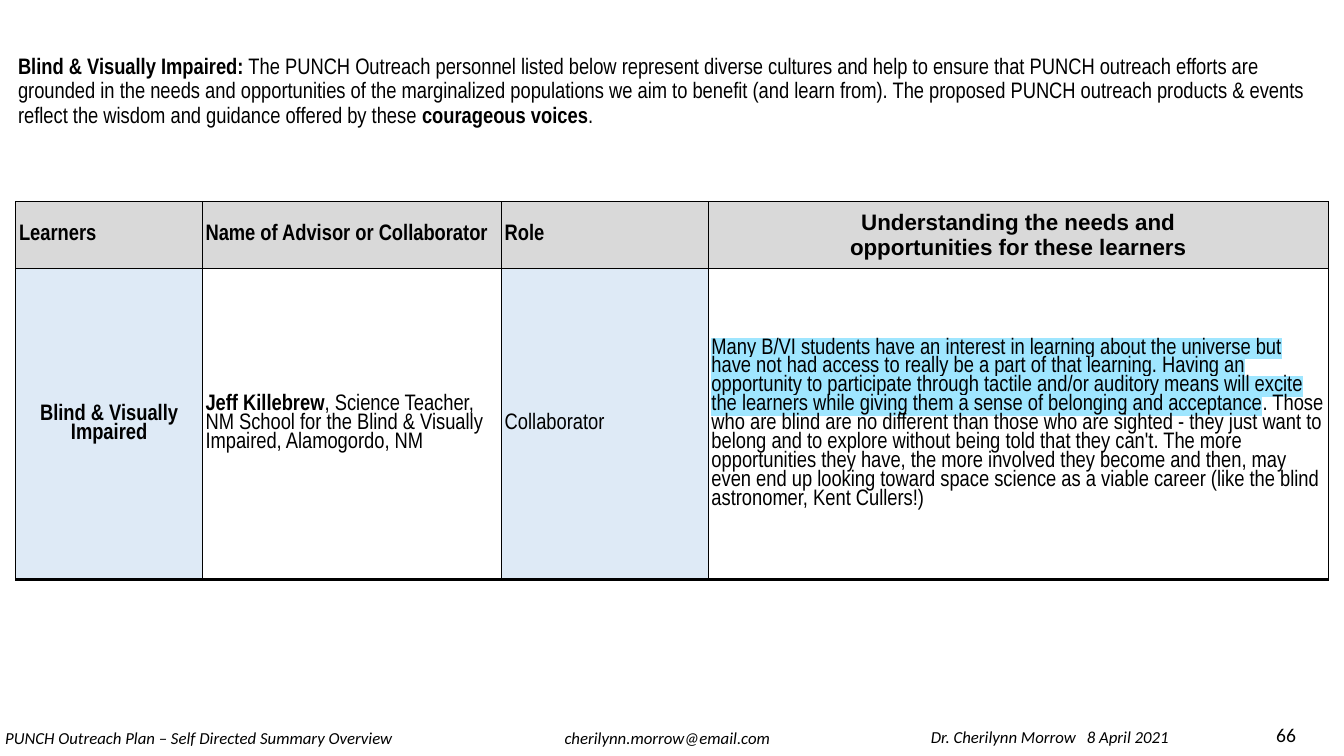
"""Builds the slide on advisors for blind and visually impaired learners."""
from dataclasses import dataclass
from typing import Optional

from lxml import etree
from pptx import Presentation
from pptx.dml import color
from pptx.enum import text
from pptx.oxml import ns
from pptx import util as u

LEFT, CENTER, RIGHT = text.PP_ALIGN.LEFT, text.PP_ALIGN.CENTER, text.PP_ALIGN.RIGHT


@dataclass(frozen=True)
class Theme:
    ink: str = "000000"
    paper: str = "FFFFFF"
    header: str = "D9D9D9"
    tint: str = "DEEAF6"
    marker: str = "9FE6FF"
    narrow: str = "Arial Narrow"
    wide: str = "Arial"
    plain: str = "Calibri"
    body: int = 16
    footer: int = 12
    number: int = 14
    rule: float = 1
    heavy_rule: float = 2.5


THEME = Theme()


@dataclass(frozen=True)
class Span:
    words: str
    bold: bool = False
    marked: bool = False


@dataclass(frozen=True)
class Style:
    font: str = THEME.narrow
    size: int = THEME.body
    align: text.PP_ALIGN = LEFT
    spacing: Optional[float] = 0.9
    italic: bool = False


@dataclass(frozen=True)
class Entry:
    paragraphs: tuple[tuple[Span, ...], ...]
    fill: Optional[str] = None
    style: Style = Style()


@dataclass(frozen=True)
class Footer:
    words: str
    left: float
    top: float
    width: float
    style: Style
    inset: float = 0.13
    left_inset: float = 0.13
    tab: Optional[float] = None
    grows: bool = True


NOTE = Style(THEME.plain, THEME.footer, LEFT, None, True)
CENTERED_NOTE = Style(THEME.plain, THEME.footer, CENTER, None, True)
PAGE_NUMBER = Style(THEME.plain, THEME.number, RIGHT, None)

INTRO = (
    Span("Blind & Visually Impaired:", bold=True),
    Span(" The PUNCH Outreach personnel listed below represent diverse cultures and help to "
         "ensure that PUNCH outreach efforts are grounded in the needs and opportunities of the "
         "marginalized populations we aim to benefit (and learn from). The proposed PUNCH "
         "outreach products & events reflect the wisdom and guidance offered by these "),
    Span("courageous voices", bold=True),
    Span("."),
)

HEADINGS = [Entry(((Span(name, bold=True),),), THEME.header)
            for name in ("Learners", "Name of Advisor or Collaborator", "Role")]
HEADINGS.append(Entry(
    ((Span("Understanding the needs and", bold=True),),
     (Span("opportunities for these learners", bold=True),)),
    THEME.header, Style(font=THEME.wide, align=CENTER, spacing=None)))

ADVISOR = [
    Entry(((Span("Blind & Visually Impaired", bold=True),),), THEME.tint, Style(align=CENTER)),
    Entry(((Span("Jeff Killebrew", bold=True),
            Span(", Science Teacher, NM School for the Blind & Visually Impaired, "
                 "Alamogordo, NM")),)),
    Entry(((Span("Collaborator"),),), THEME.tint),
    Entry(((Span("Many B/VI students have an interest in learning about the universe but have "
                 "not had access to really be a part of that learning. Having an opportunity to "
                 "participate through tactile and/or auditory means will excite the learners "
                 "while giving them a sense of belonging and acceptance", marked=True),
            Span(". Those who are blind are no different than those who are sighted - they just "
                 "want to belong and to explore without being told that they can't. The more "
                 "opportunities they have, the more involved they become and then, may even end "
                 "up looking toward space science as a viable career (like the blind "
                 "astronomer, Kent Cullers!)")),)),
]

COLUMN_WIDTHS = (4.7, 7.54, 5.21, 15.62)
ROW_HEIGHTS = (1.68, 7.85)

FOOTERS = (
    Footer("PUNCH Outreach Plan – Self Directed Summary Overview", 0, 18.21, 10.39, NOTE),
    Footer("Dr. Cherilynn Morrow\t8 April 2021", 22.43, 18.19, 8.05, NOTE,
           left_inset=1.03, tab=3.93),
    Footer("cherilynn.morrow@email.com", 12.4, 18.21, 8.84, CENTERED_NOTE),
    Footer("66", 31.67, 18.08, 1.24, PAGE_NUMBER, 0.13, 0.25, grows=False),
)


def write(frame, paragraphs: tuple[tuple[Span, ...], ...], style: Style,
          tab: Optional[float] = None) -> None:
    """Fill a text frame with styled paragraphs."""
    for index, spans in enumerate(paragraphs):
        para = frame.add_paragraph() if index else frame.paragraphs[0]
        para.alignment = style.align
        para.space_before = u.Pt(0)
        if style.spacing:
            para.line_spacing = style.spacing
        if tab:
            stops = etree.SubElement(para._p.get_or_add_pPr(), ns.qn("a:tabLst"))
            etree.SubElement(stops, ns.qn("a:tab"), pos=str(u.Cm(tab)), algn="l")
        para.font.name = style.font
        para.font.size = u.Pt(style.size)
        para.font.italic = style.italic
        para.font.color.rgb = color.RGBColor.from_string(THEME.ink)
        same_weight = len({span.bold for span in spans}) == 1
        if same_weight:
            para.font.bold = spans[0].bold
        for span in spans:
            run = para.add_run()
            run.text = span.words
            if not same_weight:
                run.font.bold = span.bold
            if span.marked:
                mark = etree.SubElement(run._r.get_or_add_rPr(), ns.qn("a:highlight"))
                etree.SubElement(mark, ns.qn("a:srgbClr"), val=THEME.marker)


def paint(target, fill: Optional[str]) -> None:
    """Give a shape or cell a solid fill, or none."""
    if fill:
        target.fill.solid()
        target.fill.fore_color.rgb = color.RGBColor.from_string(fill)
    else:
        target.fill.background()


def draw_borders(cell, bottom: float) -> None:
    """Outline a table cell, with its own bottom line width."""
    properties = cell._tc.get_or_add_tcPr()
    widths = {"lnL": THEME.rule, "lnR": THEME.rule, "lnT": THEME.rule, "lnB": bottom}
    for index, (side, width) in enumerate(widths.items()):
        line = etree.Element(ns.qn(f"a:{side}"), w=str(u.Pt(width)))
        solid = etree.SubElement(line, ns.qn("a:solidFill"))
        etree.SubElement(solid, ns.qn("a:srgbClr"), val=THEME.ink)
        properties.insert(index, line)


def add_intro(page) -> None:
    """Place the introduction in the title placeholder."""
    title = page.shapes.title
    title.left, title.top, title.width, title.height = map(u.Cm, (0.2, 1.27, 33.07, 2.34))
    paint(title, THEME.paper)
    frame = title.text_frame
    frame.word_wrap = True
    frame.auto_size = text.MSO_AUTO_SIZE.NONE
    frame.vertical_anchor = text.MSO_ANCHOR.TOP
    write(frame, (INTRO,), Style())


def add_advisors(page) -> None:
    """Add the table of advisors."""
    table = page.shapes.add_table(
        len(ROW_HEIGHTS), len(COLUMN_WIDTHS), u.Cm(0.4), u.Cm(5.08),
        u.Cm(sum(COLUMN_WIDTHS)), u.Cm(sum(ROW_HEIGHTS))).table
    table.first_row = table.horz_banding = False
    for column, width in zip(table.columns, COLUMN_WIDTHS):
        column.width = u.Cm(width)
    bottoms = (THEME.rule, THEME.heavy_rule)
    for r, (entries, height, bottom) in enumerate(zip((HEADINGS, ADVISOR), ROW_HEIGHTS, bottoms)):
        table.rows[r].height = u.Cm(height)
        for c, entry in enumerate(entries):
            cell = table.cell(r, c)
            cell.margin_left = cell.margin_right = u.Cm(0.08)
            cell.margin_top = cell.margin_bottom = u.Cm(0.03)
            cell.vertical_anchor = text.MSO_ANCHOR.MIDDLE
            paint(cell, entry.fill)
            draw_borders(cell, bottom)
            write(cell.text_frame, entry.paragraphs, entry.style)


def add_footer(page, footer: Footer) -> None:
    """Add one footer box."""
    box = page.shapes.add_textbox(
        *map(u.Cm, (footer.left, footer.top, footer.width, 0.76)))
    paint(box, THEME.paper)
    frame = box.text_frame
    frame.word_wrap = True
    if footer.grows:
        frame.auto_size = text.MSO_AUTO_SIZE.SHAPE_TO_FIT_TEXT
        frame.margin_right = u.Cm(footer.inset)
    frame.margin_left = u.Cm(footer.left_inset)
    frame.margin_top = frame.margin_bottom = u.Cm(footer.inset)
    write(frame, ((Span(footer.words),),), footer.style, footer.tab)


def main() -> None:
    """Build and save the deck."""
    deck = Presentation()
    deck.slide_width, deck.slide_height = u.Cm(33.87), u.Cm(19.05)
    page = deck.slides.add_slide(deck.slide_layouts.get_by_name("Title Only"))
    add_advisors(page)
    add_intro(page)
    for footer in FOOTERS:
        add_footer(page, footer)
    deck.save("out.pptx")


if __name__ == "__main__":
    main()
